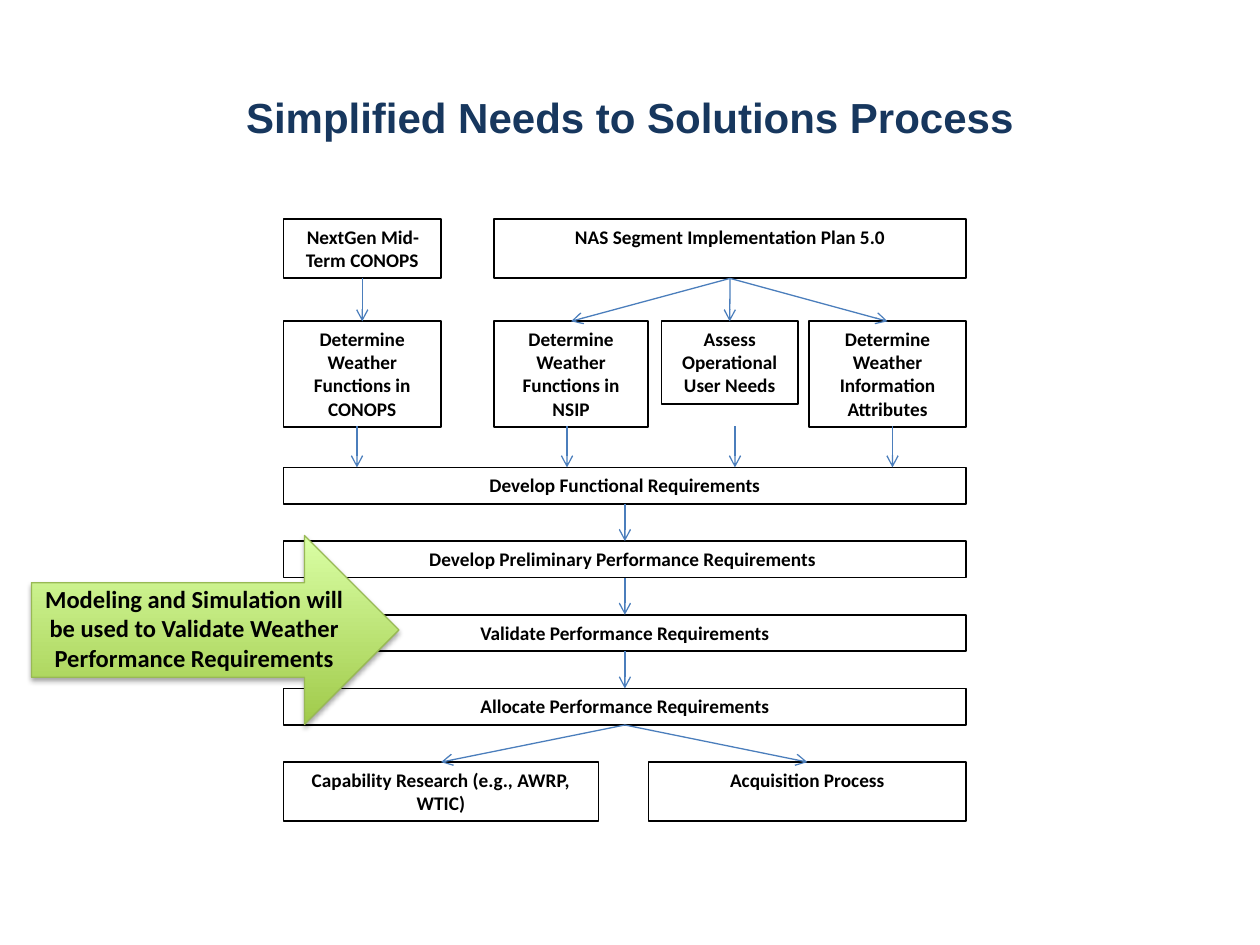
"""Build the slide "Simplified Needs to Solutions Process"."""
from typing import NamedTuple

import pptx
import pptx.dml.color
import pptx.enum.shapes
import pptx.enum.text
import pptx.oxml
import pptx.oxml.ns
import pptx.util

Pt = pptx.util.Pt
SHAPE = pptx.enum.shapes.MSO_SHAPE
STRAIGHT = pptx.enum.shapes.MSO_CONNECTOR.STRAIGHT
ANCHOR = pptx.enum.text.MSO_ANCHOR
FIT = pptx.enum.text.MSO_AUTO_SIZE
CENTER = pptx.enum.text.PP_ALIGN.CENTER
NS = pptx.oxml.ns.nsdecls("a")

LEFT, NAS_LEFT, RIGHT = 162, 282.2, 552.2
PLAN_TOP, TASK_TOP, STEP_TOP = 125.3, 183.6, 267.1
PLAN_H, TASK_H, STEP_H, STEP_PITCH = 33.8, 60.3, 20.9, 42.1
TASK_BOTTOM = 243.6
OUTPUT_TOP = STEP_TOP + 4 * STEP_PITCH
BOX_FRAME = {"word_wrap": True, "auto_size": FIT.SHAPE_TO_FIT_TEXT, "vertical_anchor": ANCHOR.TOP}
TITLE_FRAME = {"word_wrap": True, "vertical_anchor": ANCHOR.MIDDLE}


class Box(NamedTuple):
    name: str
    text: str
    x: float
    y: float
    w: float
    h: float


class Link(NamedTuple):
    begin: str
    end: str


BOXES = [
    Box("nas", "NAS Segment Implementation Plan 5.0", NAS_LEFT, PLAN_TOP, RIGHT - NAS_LEFT, PLAN_H),
    Box("midterm", "NextGen Mid-Term CONOPS", LEFT, PLAN_TOP, 90, PLAN_H),
    Box("nsip", "Determine Weather Functions in NSIP", NAS_LEFT, TASK_TOP, 88.3, TASK_H),
    Box("conops", "Determine Weather Functions in CONOPS", LEFT, TASK_TOP, 90, TASK_H),
    Box("users", "Assess Operational User Needs", 378, TASK_TOP, 78, 47.2),
    Box("attributes", "Determine Weather Information Attributes", RIGHT - 90, TASK_TOP, 90, TASK_H),
    Box("research", "Capability Research (e.g., AWRP, WTIC)", LEFT, OUTPUT_TOP, 180, PLAN_H),
    Box("acquisition", "Acquisition Process", 370.6, OUTPUT_TOP, RIGHT - 370.6, PLAN_H),
]
STEPS = [
    ("functional", "Develop Functional Requirements"),
    ("preliminary", "Develop Preliminary Performance Requirements "),
    ("validate", "Validate Performance Requirements"),
    ("allocate", "Allocate Performance Requirements"),
]
BOXES += [Box(name, text, LEFT, STEP_TOP + i * STEP_PITCH, RIGHT - LEFT, STEP_H)
          for i, (name, text) in enumerate(STEPS)]
LINKS = [
    Link("midterm", "conops"),
    Link("nas", "nsip"),
    Link("nas", "users"),
    Link("nas", "attributes"),
    Link("functional", "preliminary"),
    Link("preliminary", "validate"),
    Link("validate", "allocate"),
    Link("allocate", "research"),
    Link("allocate", "acquisition"),
]
DROPS = [204, 324, 420, 510]


def rgb(value: str) -> pptx.dml.color.RGBColor:
    return pptx.dml.color.RGBColor.from_string(value)


def apply(target, values: dict) -> None:
    for key, value in values.items():
        setattr(target, key, value)


def write(sp, text: str, frame: dict, font: dict, color: str = "000000") -> None:
    tf = sp.text_frame
    apply(tf, frame)
    p = tf.paragraphs[0]
    p.alignment = CENTER
    r = p.add_run()
    r.text = text
    apply(r.font, {"bold": True, **font})
    r.font.color.rgb = rgb(color)


def outline(sp, color: str, width: float) -> None:
    sp.line.color.rgb = rgb(color)
    sp.line.width = Pt(width)


def draw_box(s, box: Box):
    sp = s.shapes.add_shape(SHAPE.RECTANGLE, *map(Pt, box[2:]))
    sp.shadow.inherit = False
    sp.fill.solid()
    sp.fill.fore_color.rgb = rgb("FFFFFF")
    outline(sp, "000000", 1)
    write(sp, box.text, BOX_FRAME, {"name": "Calibri", "size": Pt(11)})
    return sp


def draw_arrow(s, x: float = 0, y1: float = 0, y2: float = 0):
    cxn = s.shapes.add_connector(STRAIGHT, Pt(x), Pt(y1), Pt(x), Pt(y2))
    outline(cxn, "4B7EBC", 0.75)
    cxn.line._get_or_add_ln().append(pptx.oxml.parse_xml(f'<a:tailEnd {NS} type="arrow"/>'))
    cxn._element.spPr.append(pptx.oxml.parse_xml(f"<a:effectLst {NS}/>"))
    return cxn


def draw_callout(s) -> None:
    group = s.shapes.add_group_shape()
    sp = group.shapes.add_shape(SHAPE.RIGHT_ARROW, Pt(18), Pt(306), Pt(210), Pt(108))
    sp.fill.gradient()
    sp.fill.gradient_angle = 90
    for stop, color in zip(sp.fill.gradient_stops, ("A0CA4A", "DAFFA5")):
        stop.color.rgb = rgb(color)
    outline(sp, "98B955", 0.75)
    sp._element.spPr.append(pptx.oxml.parse_xml(
        f'<a:effectLst {NS}><a:outerShdw blurRad="{Pt(3.1)}" dist="{Pt(1.8)}" dir="5400000" '
        'rotWithShape="0"><a:srgbClr val="000000"><a:alpha val="35000"/></a:srgbClr>'
        "</a:outerShdw></a:effectLst>"))
    label = group.shapes.add_textbox(Pt(18), Pt(330), Pt(186), Pt(58.2))
    write(label, "Modeling and Simulation will be used to Validate Weather Performance Requirements",
          BOX_FRAME, {"name": "Calibri", "size": Pt(14)})


def main() -> None:
    prs = pptx.Presentation()
    apply(prs, {"slide_width": Pt(720), "slide_height": Pt(540)})
    s = prs.slides.add_slide(prs.slide_layouts[6])
    title = s.shapes.add_textbox(Pt(36), Pt(21.6), Pt(648), Pt(90))
    write(title, "Simplified Needs to Solutions Process", TITLE_FRAME,
          {"name": "Arial", "size": Pt(24)}, "17375E")
    boxes = {box.name: draw_box(s, box) for box in BOXES}
    for link in LINKS:
        cxn = draw_arrow(s)
        cxn.begin_connect(boxes[link.begin], 2)
        cxn.end_connect(boxes[link.end], 0)
    for x in DROPS:
        draw_arrow(s, x, TASK_BOTTOM, STEP_TOP)
    draw_callout(s)
    prs.save("out.pptx")


if __name__ == "__main__":
    main()
